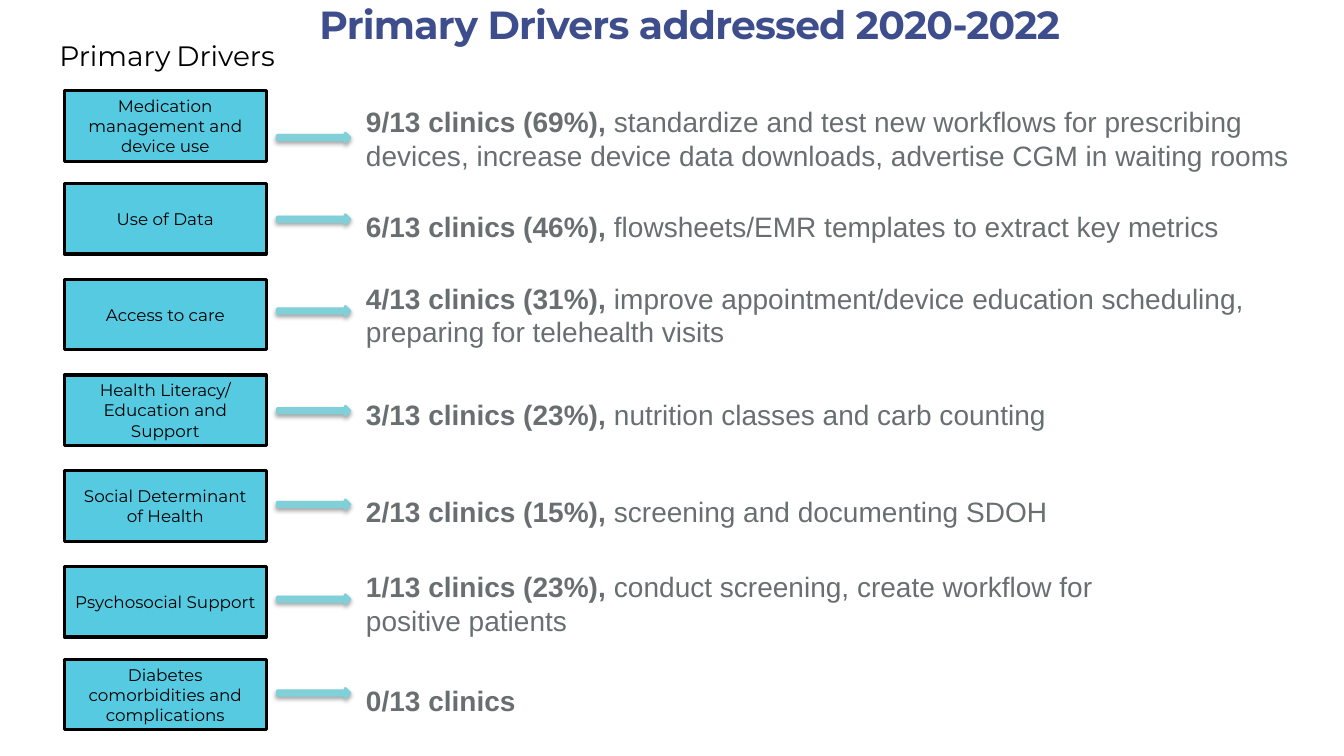
from lxml import etree
from pptx import Presentation
from pptx.dml.color import RGBColor
from pptx.enum.shapes import MSO_SHAPE as Shape
from pptx.enum.text import MSO_ANCHOR as Anchor, MSO_AUTO_SIZE as AutoSize, PP_ALIGN as Align
from pptx.oxml.ns import qn
from pptx.util import Inches, Pt

DRIVERS = [
    ("Medication management and device use", "9/13 clinics (69%), ",
     "standardize and test new workflows for prescribing devices, increase device data downloads, "
     "advertise CGM in waiting rooms", 0.9, 1.32, (0.99, 9.26, 0.77)),
    ("Use of Data", "6/13 clinics (46%), ",
     "flowsheets/EMR templates to extract key metrics", 1.82, 2.13, (2.03, 9.26, 0.44)),
    ("Access to care", "4/13 clinics (31%), ",
     "improve appointment/device education scheduling, preparing for telehealth visits",
     2.77, 3.04, (2.74, 9.26, 0.77)),
    ("Health Literacy/ Education and Support", "3/13 clinics (23%), ",
     "nutrition classes and carb counting", 3.72, 4.03, (3.89, 9.26, 0.44)),
    ("Social Determinant of Health", "2/13 clinics (15%), ",
     "screening and documenting SDOH", 4.67, 4.96, (4.86, 9.26, 0.44)),
    ("Psychosocial Support", "1/13 clinics (23%), ",
     "conduct screening, create workflow for positive patients", 5.62, 5.9, (5.6, 8, 0.77)),
    ("Diabetes comorbidities and complications", "0/13 clinics", "", 6.54, 6.83, (6.73, 9.26, 0.44)),
]


def color(value):
    return RGBColor.from_string(value)


def add_text(paragraph, text, font="Montserrat", size=12, fill="000000", bold=False, spacing=None):
    run = paragraph.add_run()
    run.text = text
    run.font.name = font
    run.font.size = Pt(size)
    run.font.bold = bold
    run.font.color.rgb = color(fill)
    if spacing is not None:
        run.font._element.set("spc", str(round(spacing * 100)))


def set_insets(frame, inset):
    frame.margin_left = frame.margin_right = Inches(inset)
    frame.margin_top = frame.margin_bottom = Inches(inset)


def add_box(slide, kind, box, fill, line, width):
    shape = slide.shapes.add_shape(kind, *map(Inches, box))
    shape.shadow.inherit = False
    shape.fill.solid()
    shape.fill.fore_color.rgb = color(fill)
    shape.line.color.rgb = color(line)
    shape.line.width = Pt(width)
    return shape


def add_text_box(slide, box):
    shape = slide.shapes.add_textbox(*map(Inches, box))
    shape.text_frame.word_wrap = True
    shape.text_frame.auto_size = AutoSize.SHAPE_TO_FIT_TEXT
    return shape.text_frame


def add_title(slide, box):
    title = slide.shapes.title
    title.left, title.top, title.width, title.height = map(Inches, box)
    frame = title.text_frame
    frame.auto_size = AutoSize.NONE
    frame.vertical_anchor = Anchor.MIDDLE
    set_insets(frame, 0.05)
    paragraph = frame.paragraphs[0]
    paragraph.alignment = Align.CENTER
    add_text(paragraph, "Primary Drivers addressed 2020-2022",
             size=28, fill="3E4E8D", bold=True, spacing=-0.5)


def add_heading(slide, box):
    frame = add_text_box(slide, box)
    for text, size in (("Primary", 20), (" ", 16), ("Drivers", 20)):
        add_text(frame.paragraphs[0], text, size=size)


def add_driver(slide, box, name):
    shape = add_box(slide, Shape.RECTANGLE, box, "56CAE1", "000000", 2.25)
    frame = shape.text_frame
    frame.word_wrap = True
    frame.vertical_anchor = Anchor.MIDDLE
    frame.paragraphs[0].alignment = Align.CENTER
    add_text(frame.paragraphs[0], name)


def add_arrow(slide, box):
    arrow = add_box(slide, Shape.RIGHT_ARROW, box, "7FD0D9", "7FD0D9", 2)
    effects = arrow._element.spPr.find(qn("a:effectLst"))
    shadow = etree.SubElement(effects, qn("a:outerShdw"), blurRad=str(Pt(3)),
                              dist=str(Pt(1.8)), dir="5400000", rotWithShape="0")
    shade = etree.SubElement(shadow, qn("a:srgbClr"), val="000000")
    etree.SubElement(shade, qn("a:alpha"), val="35000")


def add_result(slide, box, count, actions):
    frame = add_text_box(slide, box)
    set_insets(frame, 0.05)
    for text, bold in ((count, True), (actions, False)):
        if text:
            add_text(frame.paragraphs[0], text, font="Arial", size=20, fill="696F70", bold=bold)


def add_driver_rows(slide, left):
    for name, count, actions, driver_top, arrow_top, (top, width, height) in DRIVERS:
        add_driver(slide, (left, driver_top, 2, 0.7), name)
        add_arrow(slide, (left + 2.11, arrow_top, 0.72, 0.09))
        add_result(slide, (left + 2.94, top, width, height), count, actions)


def main():
    presentation = Presentation()
    presentation.slide_width = Inches(13.33)
    presentation.slide_height = Inches(7.5)
    slide = presentation.slides.add_slide(presentation.slide_layouts[5])
    add_title(slide, (0.84, 0.02, 12, 0.43))
    add_heading(slide, (0.49, 0.33, 2.6, 0.44))
    add_driver_rows(slide, 0.64)
    presentation.save("out.pptx")


if __name__ == "__main__":
    main()
